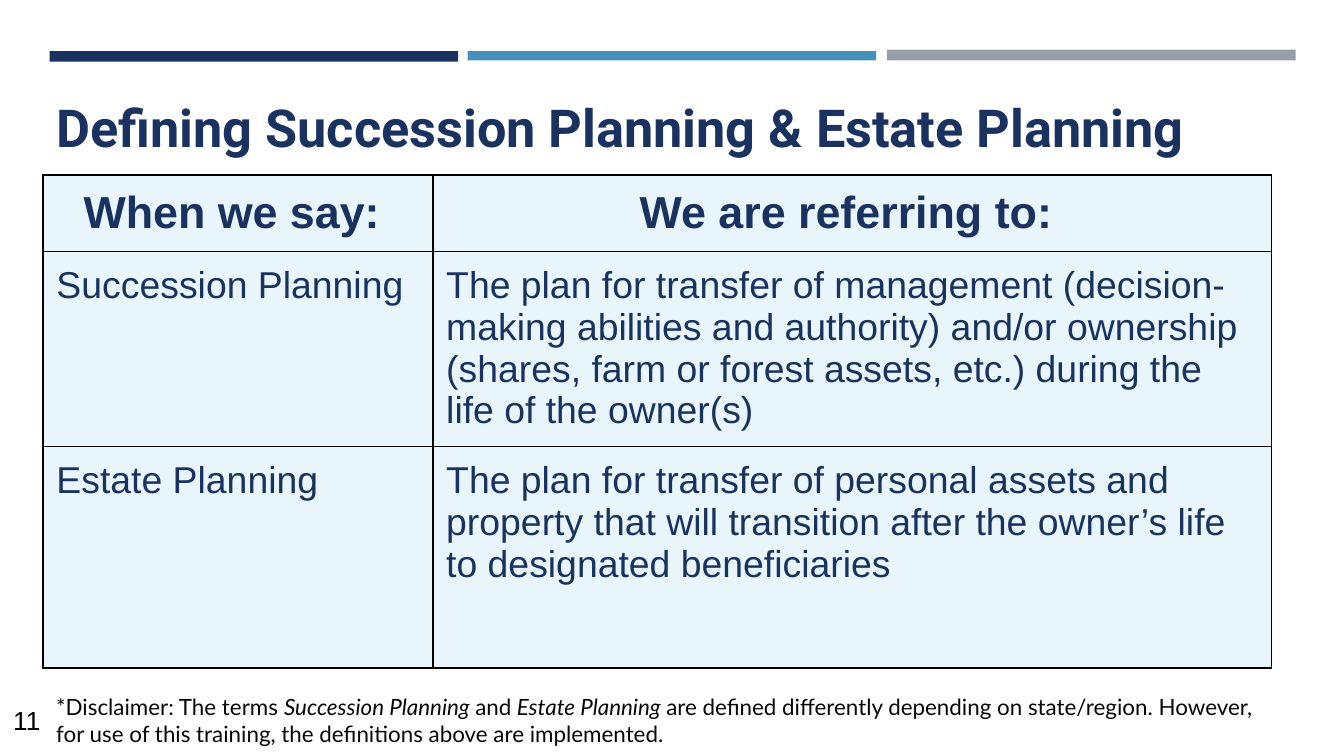
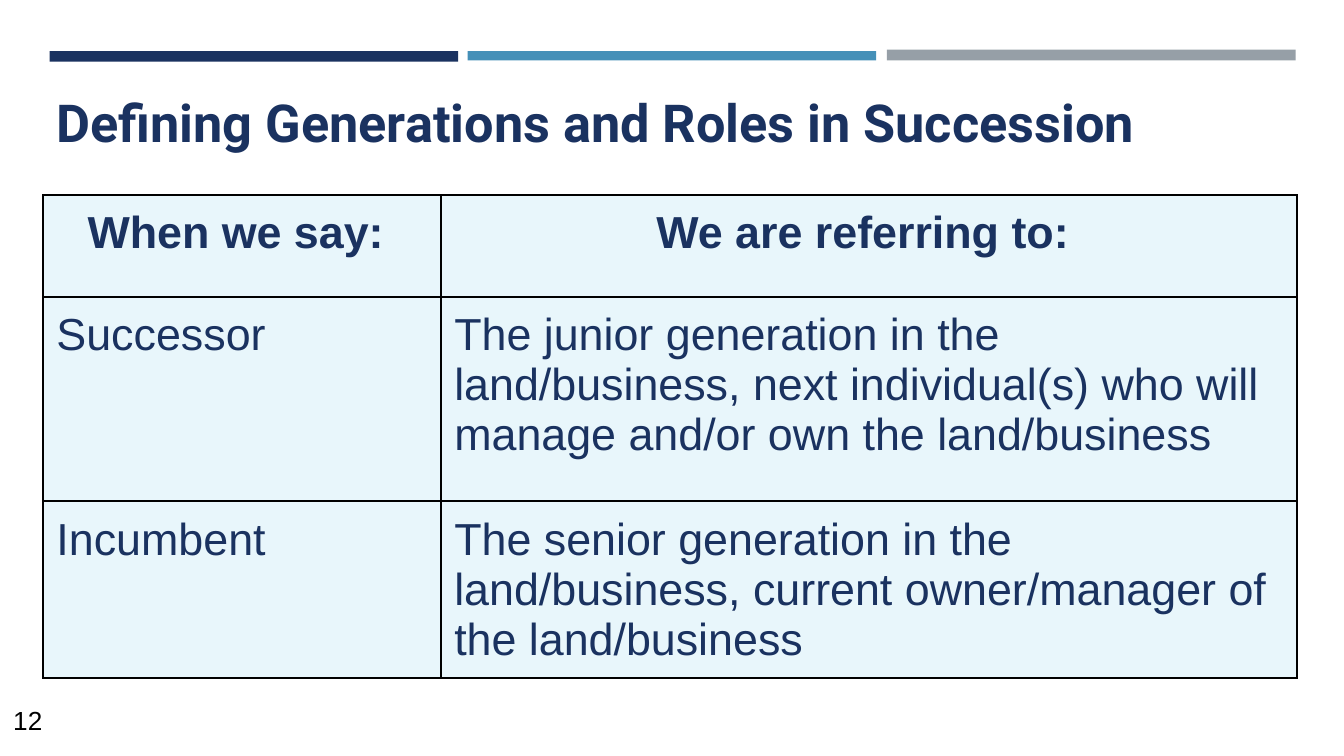
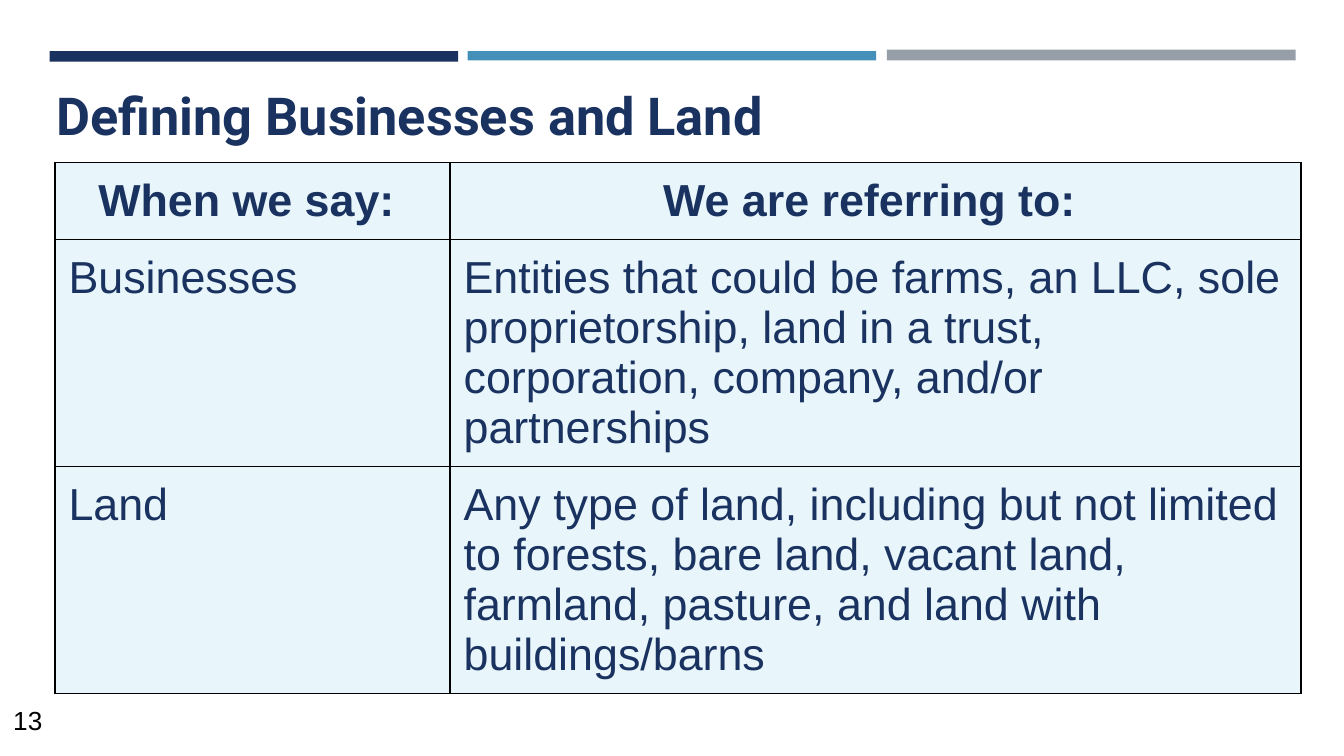
from lxml import etree
from pptx import Presentation
from pptx import util as u
from pptx.dml.color import RGBColor
from pptx.enum import shapes, text
from pptx.oxml import ns

COLORS = {
    "navy": "1A3260",
    "blue": "4590B8",
    "gray": "969FA7",
    "cell": "E8F6FB",
    "black": "000000",
    "note": "080808",
}
BANDS = [  # color, left, top, height
    ("navy", 0.37, 0.38, 0.08),
    ("gray", 6.6, 0.37, 0.08),
    ("blue", 3.48, 0.38, 0.07),
]
BAND_WIDTH = 3.04
HEADER = ("When we say: ", "We are referring to: ")
TITLE_HEIGHT = 0.76
PADDING = 0.1


def color(name):
    return RGBColor.from_string(COLORS[name])


class Deck:
    """Holds the shared style and the current slide."""

    def __init__(self, first_number):
        self.presentation = Presentation()
        self.presentation.slide_width = u.Inches(10)
        self.presentation.slide_height = u.Inches(10) * 9 // 16
        self.number = first_number
        self.slide = None

    def set_font(self, paragraph, name, size, color_name, bold=False):
        font = paragraph.font
        font.name, font.size, font.bold = name, u.Pt(size), bold
        font.color.rgb = color(color_name)

    def set_frame(self, frame, vertical=PADDING):
        frame.word_wrap = True
        frame.auto_size = text.MSO_AUTO_SIZE.NONE
        frame.vertical_anchor = text.MSO_ANCHOR.TOP
        frame.margin_left = frame.margin_right = u.Inches(PADDING)
        frame.margin_top = frame.margin_bottom = u.Inches(vertical)

    def add_slide(self, title, left, top, width):
        layout = self.presentation.slide_layouts.get_by_name("Title Only")
        self.slide = self.presentation.slides.add_slide(layout)
        self.add_bands()
        self.add_text([(str(self.number), False)], (0, 5.19, 0.62, 0.43),
                      "Arial", 14, "black", vertical=0.05)
        self.number += 1
        self.add_title(title, left, top, width)

    def add_bands(self):
        for name, left, top, height in BANDS:
            band = self.slide.shapes.add_shape(
                shapes.MSO_SHAPE.RECTANGLE,
                *map(u.Inches, (left, top, BAND_WIDTH, height)))
            band.shadow.inherit = False
            band.fill.solid()
            band.fill.fore_color.rgb = color(name)
            band.line.fill.background()

    def add_title(self, title, left, top, width):
        shape = self.slide.shapes.title
        shape.left, shape.top = u.Inches(left), u.Inches(top)
        shape.width, shape.height = u.Inches(width), u.Inches(TITLE_HEIGHT)
        shape.text_frame.text = title
        self.set_frame(shape.text_frame)
        paragraph = shape.text_frame.paragraphs[0]
        paragraph.alignment = text.PP_ALIGN.LEFT
        paragraph.line_spacing = 1.15
        self.set_font(paragraph, "Roboto", 28, "navy", bold=True)

    def add_text(self, runs, box, font_name, size, color_name,
                 vertical=PADDING):
        shape = self.slide.shapes.add_textbox(*map(u.Inches, box))
        self.set_frame(shape.text_frame, vertical)
        paragraph = shape.text_frame.paragraphs[0]
        self.set_font(paragraph, font_name, size, color_name)
        for words, italic in runs:
            run = paragraph.add_run()
            run.text = words
            if italic:
                run.font.italic = True

    def add_definitions(self, definitions, left, top, columns, rows, size=24):
        box = (left, top, sum(columns), sum(rows))
        table = self.slide.shapes.add_table(
            len(rows), len(columns), *map(u.Inches, box)).table
        table.first_row = table.horz_banding = False
        for column, width in zip(table.columns, columns):
            column.width = u.Inches(width)
        for row, height in zip(table.rows, rows):
            row.height = u.Inches(height)
        for row_index, entries in enumerate([HEADER, *definitions]):
            for column_index, words in enumerate(entries):
                self.fill_cell(table.cell(row_index, column_index), words,
                               size, is_header=row_index == 0)

    def fill_cell(self, cell, words, size, is_header):
        cell.text = words
        cell.margin_left = cell.margin_right = u.Inches(PADDING)
        cell.margin_top = cell.margin_bottom = u.Inches(PADDING)
        cell.fill.solid()
        cell.fill.fore_color.rgb = color("cell")
        paragraph = cell.text_frame.paragraphs[0]
        if is_header:
            paragraph.alignment = text.PP_ALIGN.CENTER
        self.set_font(paragraph, "Arial", 24 if is_header else size, "navy",
                      bold=is_header)
        self.add_borders(cell)

    def add_borders(self, cell):
        properties = cell._tc.get_or_add_tcPr()
        for index, side in enumerate(("lnL", "lnR", "lnT", "lnB")):
            line = etree.Element(ns.qn(f"a:{side}"), w=str(u.Pt(1)))
            fill = etree.SubElement(line, ns.qn("a:solidFill"))
            etree.SubElement(fill, ns.qn("a:srgbClr"), val=COLORS["black"])
            properties.insert(index, line)


def main():
    deck = Deck(first_number=11)

    # Succession and estate planning
    deck.add_slide("Defining Succession Planning & Estate Planning",
                   0.32, 0.54, 9.52)
    deck.add_definitions([
        ("Succession Planning",
         "The plan for transfer of management (decision-making abilities and "
         "authority) and/or ownership (shares, farm or forest assets, etc.) "
         "during the life of the owner(s)"),
        ("Estate Planning",
         "The plan for transfer of personal assets and property that will "
         "transition after the owner’s life to designated beneficiaries"),
    ], 0.32, 1.3, columns=(2.9, 6.24), rows=(0.57, 1.45, 1.65), size=20)
    deck.add_text([
        ("*Disclaimer: The terms ", False),
        ("Succession Planning ", True),
        ("and", False),
        (" Estate Planning ", True),
        ("are defined differently depending on state/region. However, for use "
         "of this training, the definitions above are implemented.", False),
    ], (0.32, 5.06, 9.14, 0.63), "Lato", 12, "note")

    # Generations and roles
    deck.add_slide("Defining Generations and Roles in Succession",
                   0.32, 0.5, 9.34)
    deck.add_definitions([
        ("Successor",
         "The junior generation in the land/business, next individual(s) who "
         "will manage and/or own the land/business"),
        ("Incumbent",
         "The senior generation in the land/business, current owner/manager "
         "of the land/business"),
    ], 0.32, 1.45, columns=(2.96, 6.37), rows=(0.76, 1.52, 1.31))

    # Businesses and land
    deck.add_slide("Defining Businesses and Land", 0.32, 0.45, 8.95)
    deck.add_definitions([
        ("Businesses",
         "Entities that could be farms, an LLC, sole proprietorship, land in "
         "a trust, corporation, company, and/or partnerships"),
        ("Land",
         "Any type of land, including but not limited to forests, bare land, "
         "vacant land, farmland, pasture, and land with buildings/barns"),
    ], 0.41, 1.21, columns=(2.94, 6.33), rows=(0.57, 1.69, 1.69))

    deck.presentation.save("out.pptx")


if __name__ == "__main__":
    main()
